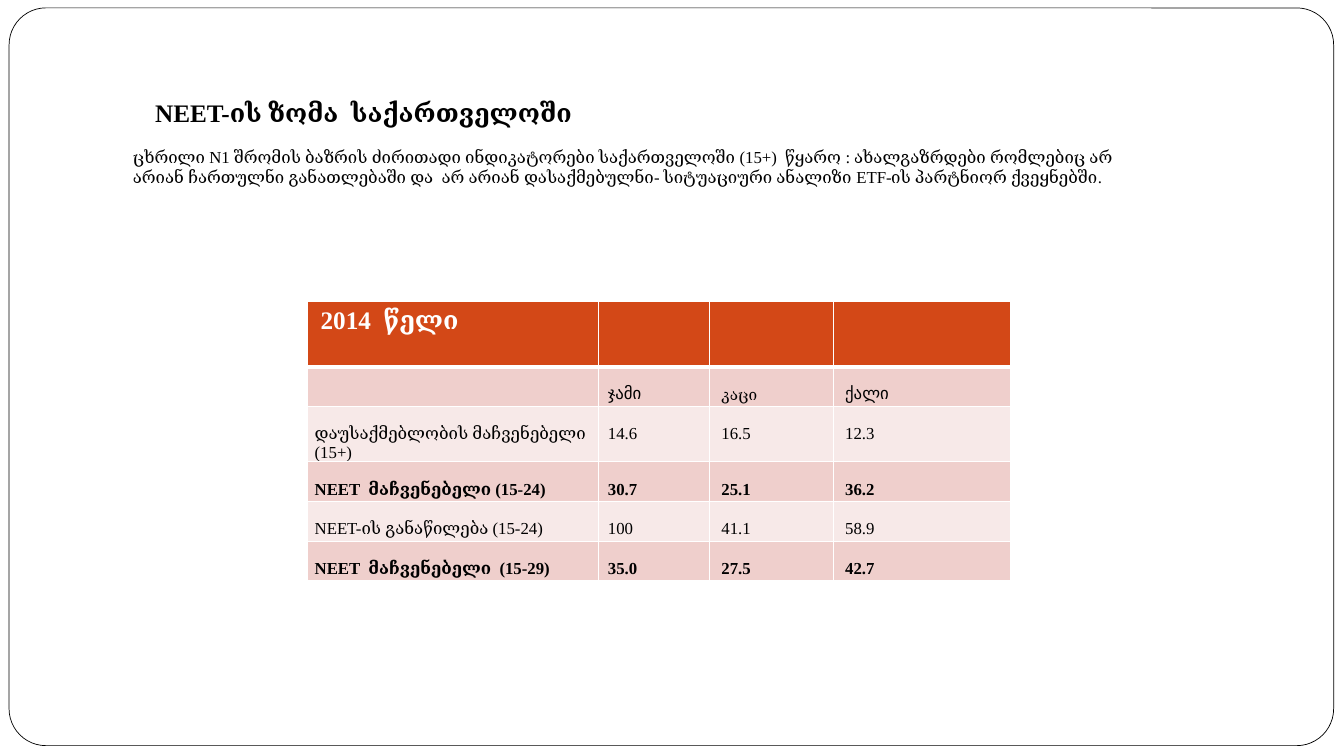
from lxml.etree import SubElement
from pptx import Presentation
from pptx.dml.color import RGBColor
from pptx.enum.shapes import MSO_SHAPE
from pptx.oxml.ns import qn
from pptx.util import Cm, Pt

SERIF, SANS = "Times New Roman", "Calibri"
BLACK, WHITE = "000000", "FFFFFF"
HEADER_FILL, BAND_FILLS = "D34817", ("EFCFCC", "F7E9E8")

TITLE = ("NEET-ის ზომა  საქართველოში", (3.66, 2.34, 21.44, 1.02), 18, True)
CAPTION = (
    "ცხრილი N1 შრომის ბაზრის ძირითადი ინდიკატორები საქართველოში (15+)  წყარო : "
    "ახალგაზრდები რომლებიც არ არიან ჩართულნი განათლებაში და  არ არიან დასაქმებულნი- "
    "სიტუაციური ანალიზი ETF-ის პარტნიორ ქვეყნებში.",
    (3.1, 3.58, 25.96, 2.06), 12, False)

INDICATORS = [
    ("2014  წელი", "", "", ""),
    ("", "ჯამი", "კაცი", "ქალი"),
    ("დაუსაქმებლობის მაჩვენებელი (15+)", "14.6", "16.5", "12.3"),
    ("NEET  მაჩვენებელი (15-24)", "30.7", "25.1", "36.2"),
    ("NEET-ის განაწილება (15-24)", "100", "41.1", "58.9"),
    ("NEET  მაჩვენებელი  (15-29)", "35.0", "27.5", "42.7"),
]
COLUMN_WIDTHS = (7.34, 2.79, 3.12, 4.47)
ROW_HEIGHTS = (1.64, 1, 1.4, 1, 1, 1)
COLUMN_INDENTS = (0.18, 0.23, 0.3, 0.3)
HEADING_FONTS = {"ჯამი": (SANS, 12), "კაცი": (SERIF, 11), "ქალი": (SANS, 12)}
BOLD_ROWS = (0, 3, 5)
LINE_PITCH = Pt(13.2)


def color(code):
    return RGBColor.from_string(code)


def write(frame, text, font, size, bold, ink):
    frame.text = text
    paragraph = frame.paragraphs[0]
    for part in (paragraph, *paragraph.runs):
        part.font.name = font
        part.font.size = Pt(size)
        part.font.bold = bold
        part.font.color.rgb = color(ink)
    return paragraph


def add_label(slide, text, box, size, bold):
    frame = slide.shapes.add_textbox(*map(Cm, box)).text_frame
    frame.word_wrap = True
    write(frame, text, SERIF, size, bold, BLACK)


def set_borders(cell, top, bottom):
    properties = cell._tc.get_or_add_tcPr()
    widths = {"a:lnL": 1, "a:lnR": 1, "a:lnT": top, "a:lnB": bottom}
    for position, (side, width) in enumerate(widths.items()):
        edge = SubElement(properties, qn(side), w=str(Pt(width)))
        paint = SubElement(edge, qn("a:solidFill"))
        SubElement(paint, qn("a:srgbClr"), val=WHITE)
        properties.insert(position, edge)


def fill_cell(cell, text, row, column):
    header = row == 0
    font, size = HEADING_FONTS.get(text, (SERIF, 18 if header else 12))
    paragraph = write(cell.text_frame, text, font, size, row in BOLD_ROWS,
                      WHITE if header else BLACK)
    if header:
        cell.margin_left = cell.margin_right = Cm(0.33)
        cell.margin_top = cell.margin_bottom = Cm(0.13)
    else:
        cell.margin_left = Cm(COLUMN_INDENTS[column])
        cell.margin_right = cell.margin_bottom = 0
        cell.margin_top = LINE_PITCH
        paragraph.line_spacing = LINE_PITCH
    cell.fill.solid()
    cell.fill.fore_color.rgb = color(HEADER_FILL if header else BAND_FILLS[(row - 1) % 2])
    set_borders(cell, 3 if row == 1 else 1, 3 if header else 1)


def add_indicators(slide):
    table = slide.shapes.add_table(
        len(INDICATORS), len(COLUMN_WIDTHS), Cm(7.75), Cm(7.6),
        Cm(sum(COLUMN_WIDTHS)), Cm(sum(ROW_HEIGHTS))).table
    for column, width in zip(table.columns, COLUMN_WIDTHS):
        column.width = Cm(width)
    for row, height in zip(table.rows, ROW_HEIGHTS):
        row.height = Cm(height)
    for row, values in enumerate(INDICATORS):
        for column, value in enumerate(values):
            fill_cell(table.cell(row, column), value, row, column)


def add_frame(slide):
    frame = slide.shapes.add_shape(
        MSO_SHAPE.ROUNDED_RECTANGLE, Cm(0.23), Cm(0.2), Cm(33.38), Cm(18.59))
    frame.adjustments[0] = 0.05
    frame.shadow.inherit = False
    frame.fill.solid()
    frame.fill.fore_color.rgb = color(WHITE)
    frame.line.color.rgb = color(BLACK)
    frame.line.width = Pt(0.5)


def main():
    deck = Presentation()
    deck.slide_width, deck.slide_height = Cm(33.87), Cm(19.05)
    slide = deck.slides.add_slide(deck.slide_layouts[6])
    add_frame(slide)
    add_indicators(slide)
    for label in (CAPTION, TITLE):
        add_label(slide, *label)
    deck.save("out.pptx")


if __name__ == "__main__":
    main()
